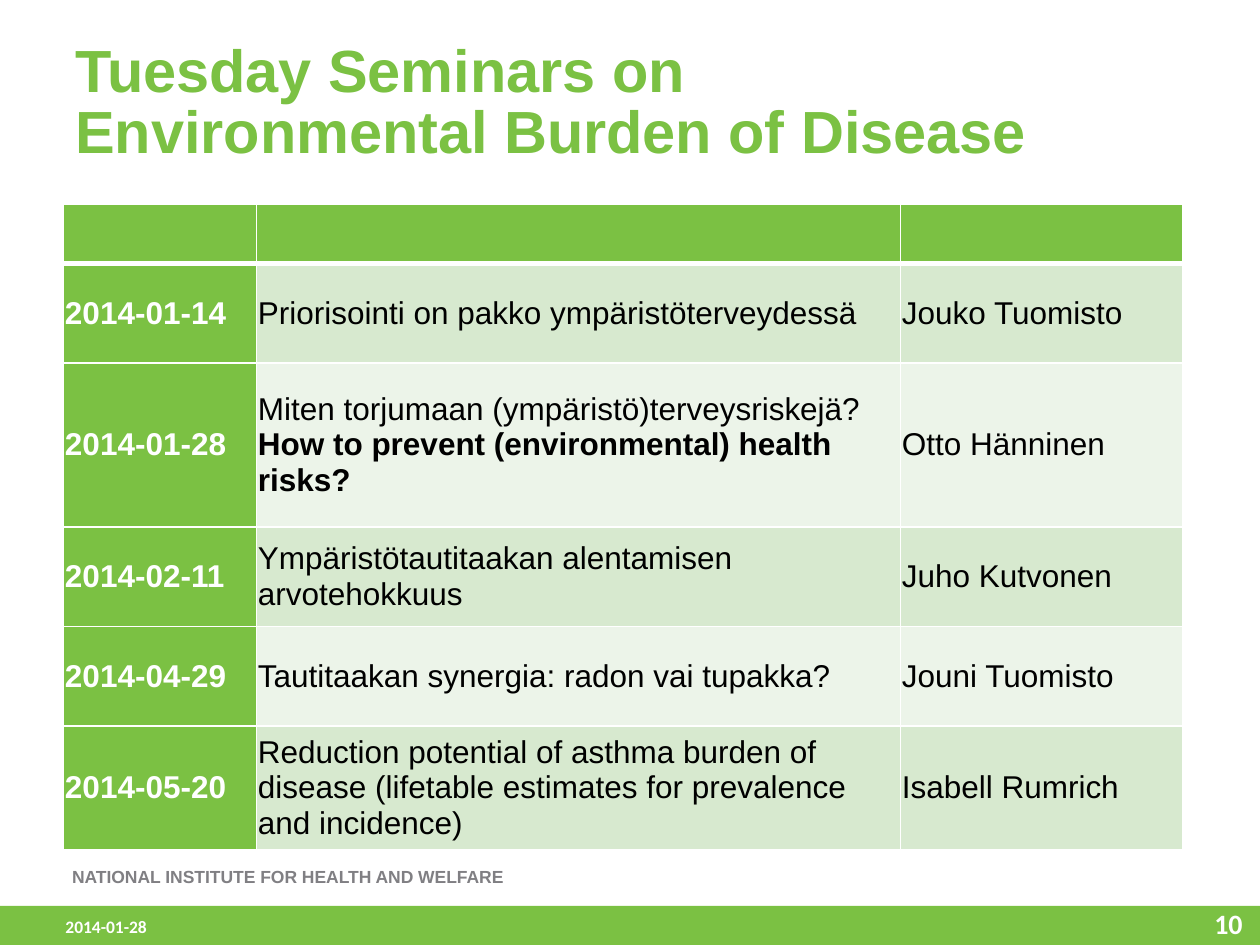
from lxml.etree import SubElement
from pptx import Presentation
from pptx.dml.color import RGBColor
from pptx.enum.shapes import MSO_SHAPE
from pptx.enum.text import MSO_ANCHOR as ANCHOR, PP_ALIGN as ALIGN
from pptx.oxml.ns import qn
from pptx.util import Cm, Pt

GREEN, WHITE, GREY, BLACK = "7BC143", "FFFFFF", "807F83", "000000"
BANDS = ["D7E9CF", "ECF4E9"]
COL_WIDTHS = [3.89, 12.98, 5.69]
ROW_HEIGHTS = [1.19, 2.01, 3.3, 2.01, 2.01, 2.49]
SEMINARS = [
    ("2014-01-14", [("Priorisointi on pakko ympäristöterveydessä", False)], "Jouko Tuomisto"),
    ("2014-01-28", [("Miten torjumaan (ympäristö)terveysriskejä?", False),
                    ("How to prevent (environmental) health risks?", True)], "Otto Hänninen"),
    ("2014-02-11", [("Ympäristötautitaakan alentamisen arvotehokkuus", False)], "Juho Kutvonen"),
    ("2014-04-29", [("Tautitaakan synergia: radon vai tupakka?", False)], "Jouni Tuomisto"),
    ("2014-05-20", [("Reduction potential of asthma burden of disease "
                     "(lifetable estimates for prevalence and incidence)", False)], "Isabell Rumrich"),
]


def rgb(value):
    return RGBColor.from_string(value)


def set_attrs(obj, **values):
    for name, value in values.items():
        setattr(obj, name, value)


def write_lines(p, lines, color, size, font="Arial"):
    """Fill a paragraph with (text, bold) lines parted by line breaks."""
    for i, (text, bold) in enumerate(lines):
        if i:
            p.add_line_break()
        r = p.add_run()
        r.text = text
        set_attrs(r.font, name=font, size=Pt(size), bold=bold)
        r.font.color.rgb = rgb(color)


def add_bar(slide, box, color):
    sp = slide.shapes.add_shape(MSO_SHAPE.RECTANGLE, *map(Cm, box))
    sp.shadow.inherit = False
    sp.fill.solid()
    sp.fill.fore_color.rgb = rgb(color)
    sp.line.fill.background()


def add_text(slide, box, lines, color, size, font="Arial", align=ALIGN.LEFT,
             anchor=ANCHOR.MIDDLE, wrap=True, spacing=1.0):
    tf = slide.shapes.add_textbox(*map(Cm, box)).text_frame
    set_attrs(tf, word_wrap=wrap, vertical_anchor=anchor)
    p = tf.paragraphs[0]
    set_attrs(p, alignment=align, line_spacing=spacing)
    write_lines(p, [(line, True) for line in lines], color, size, font)


def set_borders(cell, widths):
    """Draw white cell borders; widths are points for left, right, top, bottom."""
    tc_pr = cell._tc.get_or_add_tcPr()
    for i, (side, width) in enumerate(zip("LRTB", widths)):
        ln = SubElement(tc_pr, qn(f"a:ln{side}"), w=str(Pt(width)))
        fill = SubElement(ln, qn("a:solidFill"))
        SubElement(fill, qn("a:srgbClr"), val=WHITE)
        tc_pr.insert(i, ln)


def style_cell(cell, color, top=1, bottom=1):
    cell.fill.solid()
    cell.fill.fore_color.rgb = rgb(color)
    set_borders(cell, [1, 1, top, bottom])


def add_schedule(slide, left, top):
    box = left, top, sum(COL_WIDTHS), sum(ROW_HEIGHTS)
    table = slide.shapes.add_table(len(ROW_HEIGHTS), len(COL_WIDTHS), *map(Cm, box)).table
    for col, width in zip(table.columns, COL_WIDTHS):
        col.width = Cm(width)
    for row, height in zip(table.rows, ROW_HEIGHTS):
        row.height = Cm(height)
    for cell in table.rows[0].cells:
        style_cell(cell, GREEN, bottom=3)
    margins = {f"margin_{side}": Cm(0.03) for side in ("left", "right", "top", "bottom")}
    for i, (date, topic, speaker) in enumerate(SEMINARS):
        band = BANDS[i % 2]
        contents = [([(date, True)], WHITE, GREEN), (topic, BLACK, band),
                    ([(speaker, False)], BLACK, band)]
        for cell, (lines, color, fill) in zip(table.rows[i + 1].cells, contents):
            style_cell(cell, fill, top=1 if i else 3)
            set_attrs(cell, vertical_anchor=ANCHOR.MIDDLE, **margins)
            write_lines(cell.text_frame.paragraphs[0], lines, color, 18)


def add_footer(slide, left, top, width, height):
    add_bar(slide, (left, top, width, height), GREEN)
    add_text(slide, (left + 1.09, top - 0.94, 9.42, 0.69),
             ["NATIONAL INSTITUTE FOR HEALTH AND WELFARE"], GREY, 10,
             align=ALIGN.CENTER, wrap=False)
    add_text(slide, (left + 1.07, top + 0.05, 4.45, 0.74), ["2014-01-28"], WHITE, 10, "Calibri")
    add_text(slide, (left + width - 1.57, top + 0.03, 1.47, 0.64), ["10"], WHITE, 16,
             "Calibri", align=ALIGN.RIGHT)


def main():
    prs = Presentation()
    set_attrs(prs, slide_width=Cm(25.4), slide_height=Cm(19.05))
    slide = prs.slides.add_slide(prs.slide_layouts[6])
    add_footer(slide, 0, 18.26, 25.4, 0.79)
    add_text(slide, (1.27, 0.84, 22.86, 2.62),
             ["Tuesday Seminars on", "Environmental Burden of Disease"], GREEN, 34,
             anchor=ANCHOR.BOTTOM, spacing=0.85)
    add_schedule(slide, 1.28, 4.12)
    prs.save("out.pptx")


if __name__ == "__main__":
    main()
